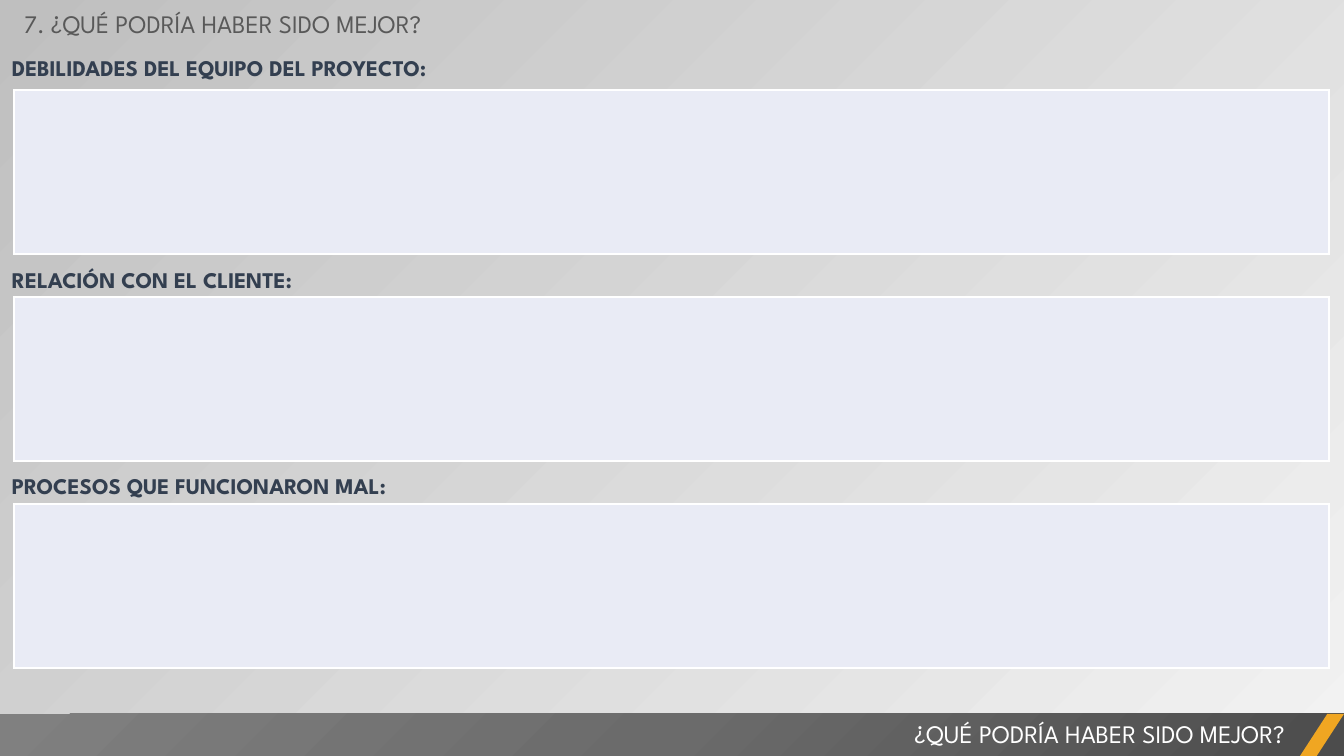
from dataclasses import dataclass

from lxml import etree
from pptx import Presentation
from pptx.dml.color import RGBColor as Rgb
from pptx.enum.shapes import MSO_SHAPE as Shape
from pptx.enum.text import MSO_AUTO_SIZE as AutoSize, PP_ALIGN as Align
from pptx.oxml import parse_xml
from pptx.util import Pt

EMU_PER_PX = 9071
DRAWING_NS = "http://schemas.openxmlformats.org/drawingml/2006/main"


@dataclass(frozen=True)
class Theme:
    font: str = "League Spartan"
    title_size: float = 18
    label_size: float = 16
    title: str = "595959"
    label: str = "333F50"
    white: str = "FFFFFF"
    answer: str = "E9EBF5"
    accent: str = "F0A622"
    page: tuple = ("F2F2F2", "BFBFBF")
    footer: tuple = ("4C4C4C", "6B6B6B", "808080")


THEME = Theme()


def px(*lengths):
    return [length * EMU_PER_PX for length in lengths]


def add_text(page, box, text, size, color, inset=(10, 5), bold=None, align=None):
    frame = page.shapes.add_textbox(*px(*box)).text_frame
    frame.word_wrap = True
    frame.auto_size = AutoSize.SHAPE_TO_FIT_TEXT
    frame.margin_left = frame.margin_right = px(inset[0])[0]
    frame.margin_top = frame.margin_bottom = px(inset[1])[0]
    para = frame.paragraphs[0]
    para.text = text
    para.alignment = align
    para.font.name, para.font.size, para.font.bold = THEME.font, Pt(size), bold
    para.font.color.rgb = Rgb.from_string(color)
    return para


def add_plain_shape(page, kind, box):
    shape = page.shapes.add_shape(kind, *px(*box))
    shape.shadow.inherit = False
    shape.line.fill.background()
    return shape


def set_border(cell, color, width):
    properties = cell._tc.get_or_add_tcPr()
    for index, side in enumerate(("lnL", "lnR", "lnT", "lnB")):
        properties.insert(index, parse_xml(
            f'<a:{side} xmlns:a="{DRAWING_NS}" w="{Pt(width)}"><a:solidFill>'
            f'<a:srgbClr val="{color}"/></a:solidFill></a:{side}>'))


def set_corner_gradient(shape, colors):
    """Radial gradient that spreads from the bottom right corner."""
    shape.fill.gradient()
    gradient = shape._element.spPr.find(f"{{{DRAWING_NS}}}gradFill")
    for child in list(gradient):
        gradient.remove(child)

    def add(parent, tag, **attributes):
        return etree.SubElement(parent, f"{{{DRAWING_NS}}}{tag}", **attributes)

    stops = add(gradient, "gsLst")
    for index, color in enumerate(colors):
        position = 100000 * index // (len(colors) - 1)
        add(add(stops, "gs", pos=str(position)), "srgbClr", val=color)
    add(add(gradient, "path", path="circle"), "fillToRect", l="100000", t="100000")


def paint_background(page):
    fill = page.background.fill
    fill.gradient()
    fill.gradient_angle = 135
    for stop, color in zip(fill.gradient_stops, THEME.page):
        stop.color.rgb = Rgb.from_string(color)


def add_section(page, box, label, label_rise, line_spacing):
    left, top, width, height = box
    # Answer field
    table = page.shapes.add_table(1, 1, *px(*box)).table
    table.first_row = table.horz_banding = False
    cell = table.cell(0, 0)
    cell.fill.solid()
    cell.fill.fore_color.rgb = Rgb.from_string(THEME.answer)
    set_border(cell, THEME.white, 1)
    # Label above it
    para = add_text(page, (left - 14, top - label_rise, 1059, 40), label,
                    THEME.label_size, THEME.label, inset=(12, 6), bold=True)
    para.line_spacing = line_spacing
    para.space_before = Pt(0.2 * THEME.label_size)


def add_footer(page, box, text):
    left, top, width, height = box
    # Bar
    bar = add_plain_shape(page, Shape.RECTANGLE, box)
    set_corner_gradient(bar, THEME.footer)
    # Caption
    add_text(page, (left + 529, top - 1, 766, 40), text,
             THEME.title_size, THEME.white, align=Align.RIGHT)
    # Slanted accent
    accent = add_plain_shape(page, Shape.PARALLELOGRAM, (left + width - 44, top, 44, height))
    accent.adjustments[0] = 0.65
    accent.fill.solid()
    accent.fill.fore_color.rgb = Rgb.from_string(THEME.accent)


def build_review_page(page, box):
    left, top, width, height = box
    question = "¿QUÉ PODRÍA HABER SIDO MEJOR?"
    sections = (
        ("DEBILIDADES DEL EQUIPO DEL PROYECTO:", 45, Pt(21.5)),
        ("RELACIÓN CON EL CLIENTE:", 40, Pt(21.5)),
        ("PROCESOS QUE FUNCIONARON MAL:", 43, 1.2),
    )
    paint_background(page)
    add_text(page, (left + 14, top + 3, 535, 40), f"7. {question}",
             THEME.title_size, THEME.title)
    for index, (label, label_rise, line_spacing) in enumerate(sections):
        field = (left + 14, top + 90 + 207 * index, width - 29, 164)
        add_section(page, field, label, label_rise, line_spacing)
    add_footer(page, (left, top + height - 42, width, 42), question)


def main():
    deck = Presentation()
    deck.slide_width, deck.slide_height = px(1344, 756)
    page = deck.slides.add_slide(deck.slide_layouts[6])
    build_review_page(page, (0, 0, 1344, 756))
    deck.save("out.pptx")


if __name__ == "__main__":
    main()
